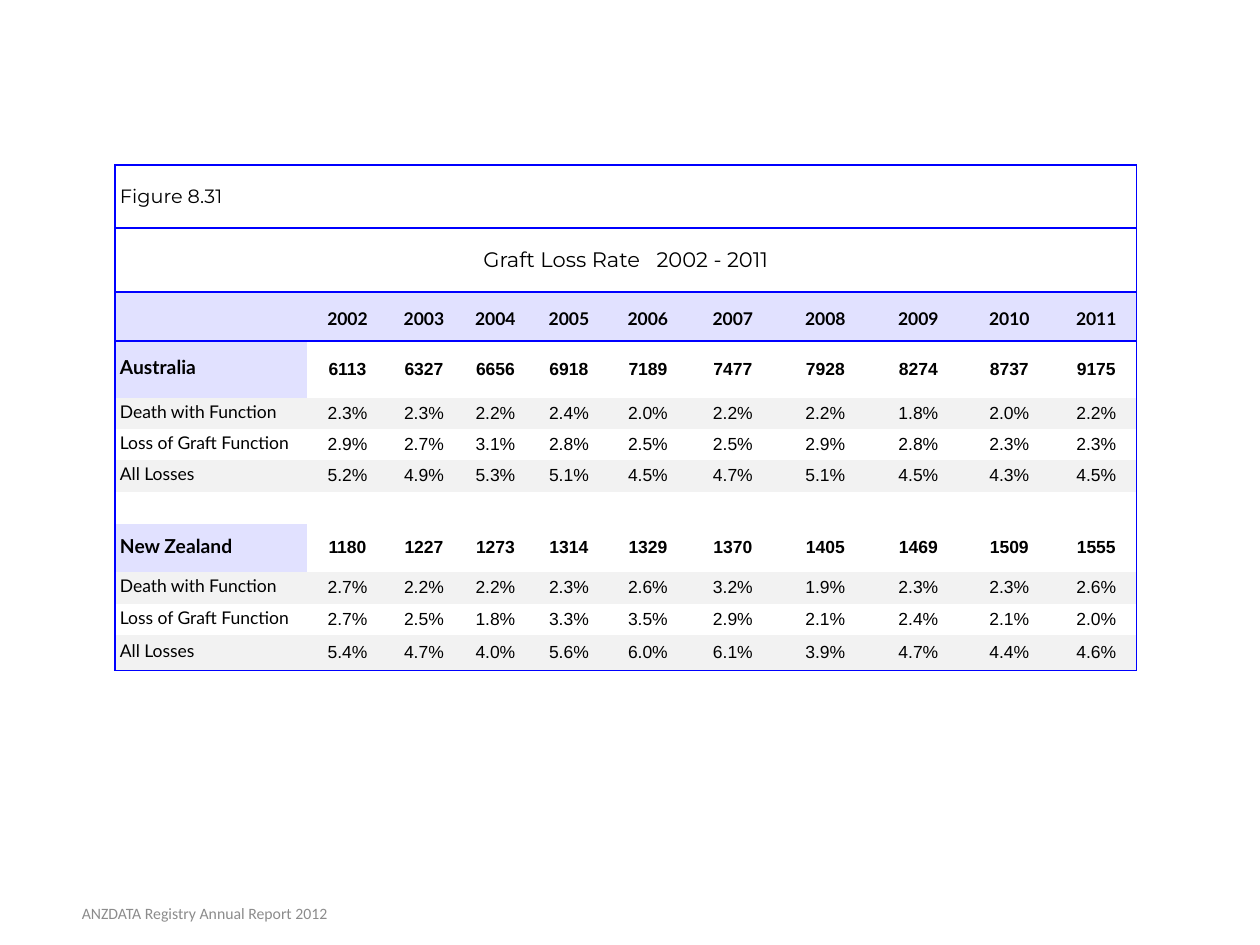
from lxml import etree
from pptx import Presentation
from pptx.dml.color import RGBColor
from pptx.enum.text import MSO_ANCHOR, PP_ALIGN
from pptx.oxml.ns import qn
from pptx.util import Emu, Pt

CENTER, LEFT = PP_ALIGN.CENTER, PP_ALIGN.LEFT
MIDDLE = MSO_ANCHOR.MIDDLE

BLACK = RGBColor(0x00, 0x00, 0x00)
BLUE = RGBColor(0x00, 0x00, 0xFF)
LAVENDER = RGBColor(0xE1, 0xE1, 0xFF)
BAND = RGBColor(0xF2, 0xF2, 0xF2)
GREY = RGBColor(0x8C, 0x8C, 0x8C)

COL_WIDTHS = [192, 81, 72, 71, 76, 82, 88, 97, 89, 93, 81]
ROW_HEIGHTS = [63, 64, 49, 57, 31, 31, 32, 32, 48, 32, 31, 36]
LAST_COL = len(COL_WIDTHS) - 1
RULED_EDGES = {0, 1, 2, 3, len(ROW_HEIGHTS)}

FIGURE, TITLE = "Figure 8.31", "Graft Loss Rate   2002 - 2011"
YEARS = [str(year) for year in range(2002, 2012)]
LOSSES = ["Death with Function", "Loss of Graft Function", "All Losses"]
# Country, first table row, grafts per year, then one line for each kind of loss
COUNTRIES = [
    ("Australia", 3, "6113 6327 6656 6918 7189 7477 7928 8274 8737 9175", [
        "2.3 2.3 2.2 2.4 2.0 2.2 2.2 1.8 2.0 2.2",
        "2.9 2.7 3.1 2.8 2.5 2.5 2.9 2.8 2.3 2.3",
        "5.2 4.9 5.3 5.1 4.5 4.7 5.1 4.5 4.3 4.5"]),
    ("New Zealand", 8, "1180 1227 1273 1314 1329 1370 1405 1469 1509 1555", [
        "2.7 2.2 2.2 2.3 2.6 3.2 1.9 2.3 2.3 2.6",
        "2.7 2.5 1.8 3.3 3.5 2.9 2.1 2.4 2.1 2.0",
        "5.4 4.7 4.0 5.6 6.0 6.1 3.9 4.7 4.4 4.6"]),
]


def px(n):
    return Emu(round(n * 914400 / 126))


def add_run(p, text, font, size, color=BLACK, bold=False):
    r = p.add_run()
    r.text = text
    r.font.name, r.font.size, r.font.bold = font, Pt(size), bold
    r.font.color.rgb = color


def set_borders(cell, row, col):
    """Rule the table's outside and the edges of its heading rows."""
    ruled = {
        "a:lnL": col == 0,
        "a:lnR": col + cell.span_width > LAST_COL,
        "a:lnT": row in RULED_EDGES,
        "a:lnB": row + 1 in RULED_EDGES,
    }
    tc_pr = cell._tc.get_or_add_tcPr()
    for tag, visible in ruled.items():
        ln = etree.SubElement(tc_pr, qn(tag), w=str(Pt(1)))
        if visible:
            fill = etree.SubElement(ln, qn("a:solidFill"))
            etree.SubElement(fill, qn("a:srgbClr"), val=str(BLUE))
        else:
            etree.SubElement(ln, qn("a:noFill"))


def prepare_cell(cell, row, col):
    set_borders(cell, row, col)
    cell.fill.background()
    cell.vertical_anchor = MIDDLE
    cell.margin_left = cell.margin_right = px(5)
    cell.margin_top = cell.margin_bottom = px({0: 10, 1: 5}.get(row, 3))


def write(cell, text, font, size, bold=False, align=CENTER, spacing=None, after=None):
    p = cell.text_frame.paragraphs[0]
    p.alignment = align
    p.line_spacing = spacing
    p.space_after = after
    add_run(p, text, font, size, bold=bold)


def fill_cell(cell, color):
    cell.fill.solid()
    cell.fill.fore_color.rgb = color


def write_row(table, row, label, values, bold=False):
    write(table.cell(row, 0), label, "Lato", 11 if bold else 10, bold, LEFT, 0.75)
    for col, value in enumerate(values, 1):
        write(table.cell(row, col), value, "Arial", 10, bold, after=Pt(14))


def write_country(table, name, row, grafts, rates):
    write_row(table, row, name, grafts.split(), bold=True)
    fill_cell(table.cell(row, 0), LAVENDER)
    for i, (loss, line) in enumerate(zip(LOSSES, rates)):
        loss_row = row + 1 + i
        write_row(table, loss_row, loss, [f"{rate}%" for rate in line.split()])
        if i % 2 == 0:
            for cell in table.rows[loss_row].cells:
                fill_cell(cell, BAND)


def add_loss_table(s):
    table = s.shapes.add_table(len(ROW_HEIGHTS), len(COL_WIDTHS), px(115), px(165),
                               px(sum(COL_WIDTHS)), px(sum(ROW_HEIGHTS))).table
    table.first_row = table.horz_banding = False
    for column, width in zip(table.columns, COL_WIDTHS):
        column.width = px(width)
    for row, height in zip(table.rows, ROW_HEIGHTS):
        row.height = px(height)
    for row in (0, 1):
        table.cell(row, 0).merge(table.cell(row, LAST_COL))
    for row in range(len(ROW_HEIGHTS)):
        for col in range(len(COL_WIDTHS)):
            prepare_cell(table.cell(row, col), row, col)

    write(table.cell(0, 0), FIGURE, "Montserrat", 11, align=LEFT)
    write(table.cell(1, 0), TITLE, "Montserrat", 12)
    for cell in table.rows[2].cells:
        fill_cell(cell, LAVENDER)
    for col, year in enumerate(YEARS, 1):
        write(table.cell(2, col), year, "Lato", 10, True, spacing=1.25)
    for country in COUNTRIES:
        write_country(table, *country)

    # Small type in the empty cells keeps their rows at the set height
    for cell in table.iter_cells():
        if not cell.text:
            p = cell.text_frame.paragraphs[0]
            etree.SubElement(p._p, qn("a:endParaRPr"), sz="1000")


def add_footer(s):
    tf = s.shapes.add_textbox(px(5), px(888), px(399), px(50)).text_frame
    tf.word_wrap = True
    tf.vertical_anchor = MIDDLE
    p = tf.paragraphs[0]
    p.alignment = CENTER
    add_run(p, "ANZDATA Registry Annual Report 2012", "Calibri", 9, GREY)


def main():
    prs = Presentation()
    prs.slide_width, prs.slide_height = px(1260), px(945)
    s = prs.slides.add_slide(prs.slide_layouts[6])
    add_loss_table(s)
    add_footer(s)
    prs.save("out.pptx")


if __name__ == "__main__":
    main()
